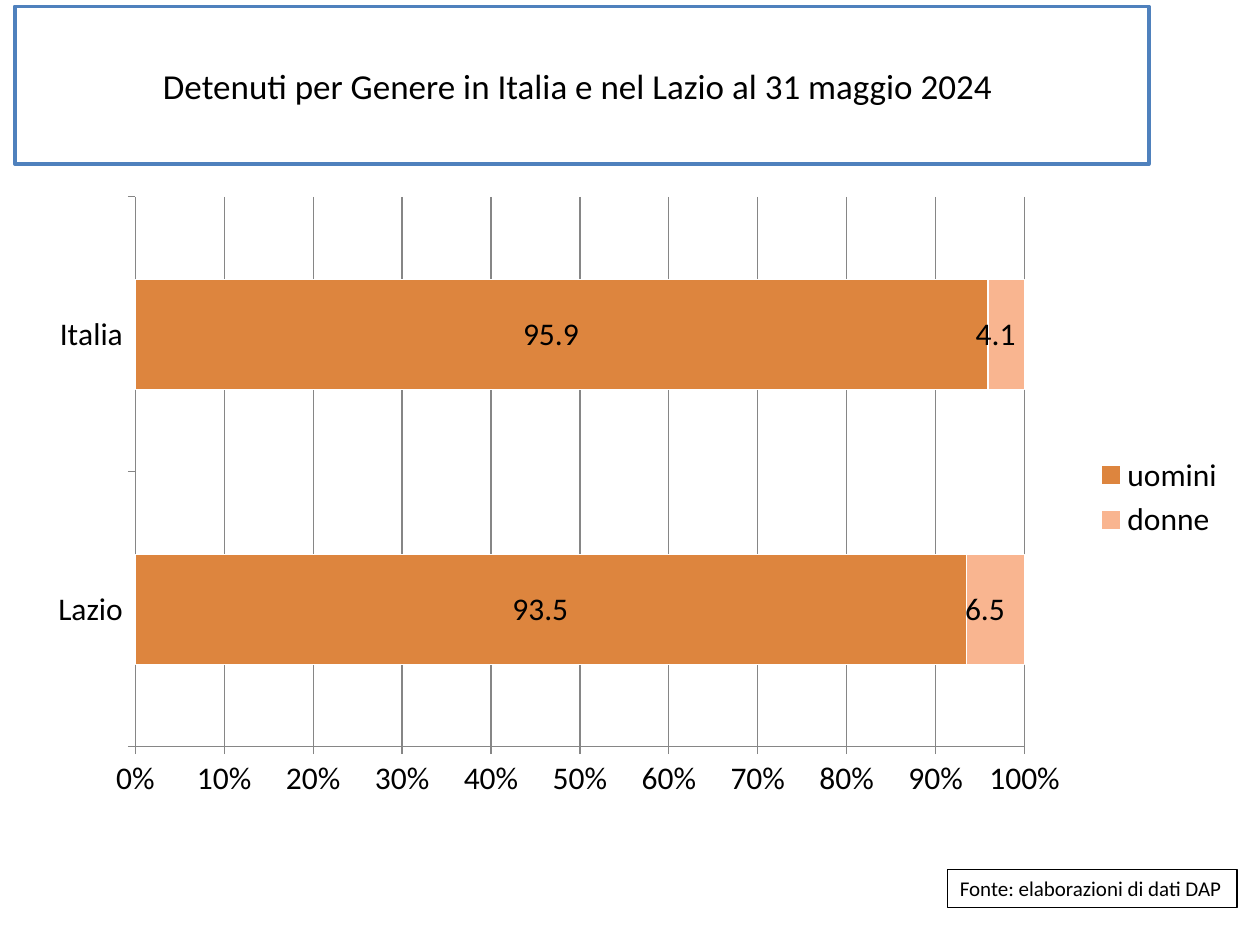
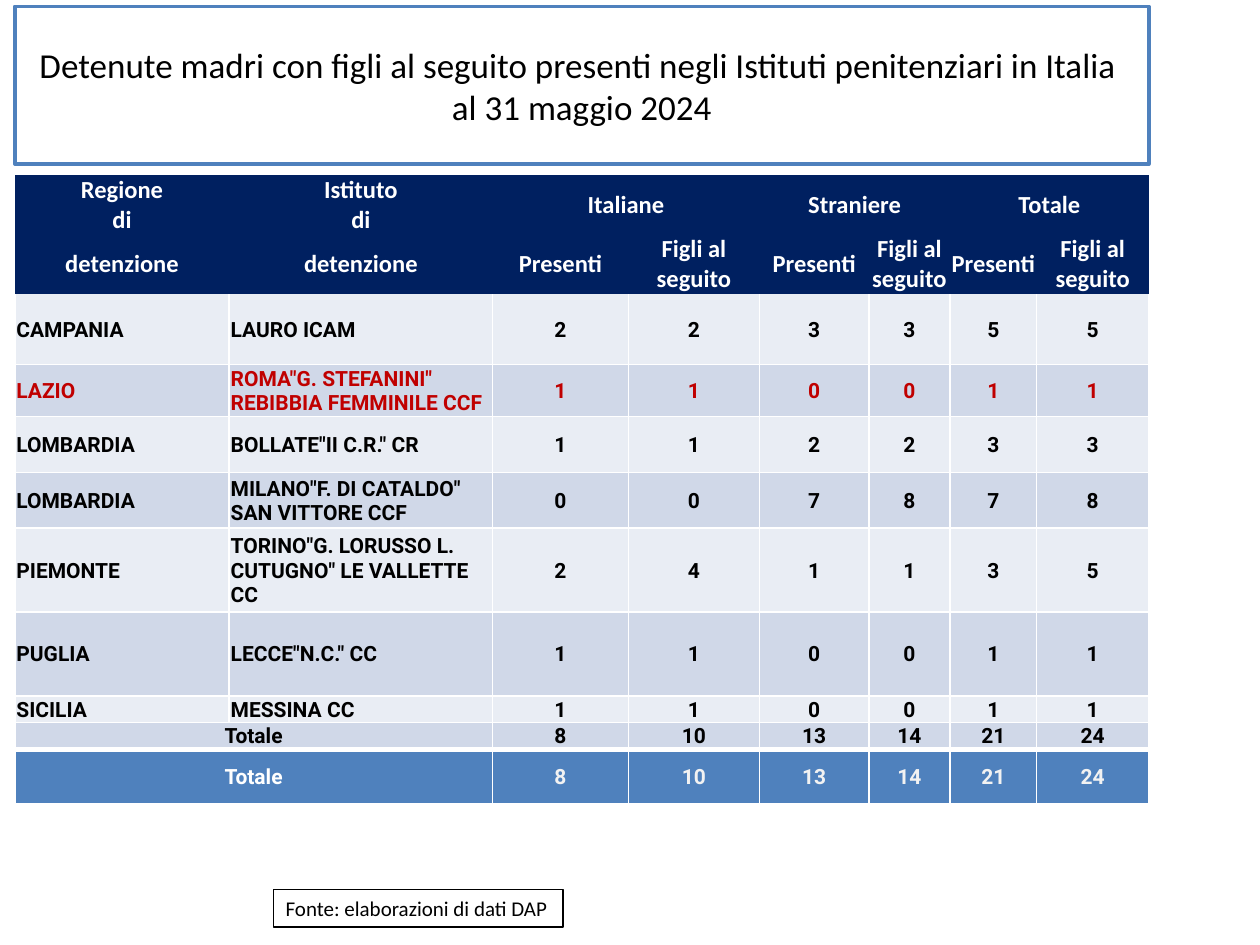
from dataclasses import dataclass

from lxml.etree import SubElement
from pptx import Presentation
from pptx.chart.data import CategoryChartData as ChartData
from pptx.dml.color import RGBColor as Rgb
from pptx.enum.chart import XL_CHART_TYPE as Kind
from pptx.enum.chart import XL_LABEL_POSITION as Spot
from pptx.enum.chart import XL_LEGEND_POSITION as Side
from pptx.enum.chart import XL_TICK_MARK as Tick
from pptx.enum.shapes import MSO_SHAPE as Form
from pptx.enum.text import MSO_ANCHOR as Anchor
from pptx.enum.text import MSO_AUTO_SIZE as Fit
from pptx.enum.text import PP_ALIGN as Align
from pptx.oxml import parse_xml
from pptx.oxml.ns import nsdecls, qn
from pptx.util import Cm, Pt

HUES = {
    "white": "FFFFFF", "black": "000000", "blue": "4F81BD", "navy": "002060",
    "light": "E9EDF4", "dark": "D0D8E8", "red": "C00000", "pale": "F2F2F2",
    "grey": "868686", "men": "DD853E", "women": "F9B590",
}
NUMBER = r"_-* #,##0.0\ _€_-;\-* #,##0.0\ _€_-"


def hue(name: str) -> Rgb:
    return Rgb.from_string(HUES[name])


@dataclass
class Box:
    """A framed text box; lengths in centimetres."""
    left: float
    top: float
    width: float
    height: float
    edge: str
    weight: float
    size: int
    title: bool = False


@dataclass
class Jail:
    """Mothers and children held, as (present, children) pairs."""
    region: str
    name: str
    locals: tuple[int, int]
    foreign: tuple[int, int]
    tone: str = "black"

    def counts(self) -> list[int]:
        both = [a + b for a, b in zip(self.locals, self.foreign)]
        return [*self.locals, *self.foreign, *both]


def write(frame, text: str, size: int = 12, font: str = "Calibri",
          tone: str = "black", bold: bool = False, align=Align.LEFT) -> None:
    par = frame.paragraphs[0]
    par.text = text
    par.alignment = align
    for run in par.runs:
        run.font.size, run.font.name, run.font.bold = Pt(size), font, bold
        run.font.color.rgb = hue(tone)


def draw(slide, box: Box, text: str) -> None:
    shape = slide.shapes.add_shape(
        Form.RECTANGLE, Cm(box.left), Cm(box.top), Cm(box.width), Cm(box.height))
    shape.shadow.inherit = False
    shape.fill.solid()
    shape.fill.fore_color.rgb = hue("white")
    shape.line.color.rgb = hue(box.edge)
    shape.line.width = Pt(box.weight)
    frame = shape.text_frame
    frame.word_wrap = box.title
    frame.vertical_anchor = Anchor.MIDDLE if box.title else Anchor.TOP
    frame.auto_size = Fit.NONE if box.title else Fit.SHAPE_TO_FIT_TEXT
    write(frame, text, size=box.size,
          align=Align.CENTER if box.title else Align.LEFT)


def start(deck, title: str, left: float, top: float):
    """Add a slide with its title and its source note."""
    slide = deck.slides.add_slide(deck.slide_layouts[6])
    draw(slide, Box(0.3, 0.13, 22.86, 3.18, "blue", 2, 20, title=True), title)
    draw(slide, Box(left, top, 5.84, 0.76, "black", 0.75, 12),
         "Fonte: elaborazioni di dati DAP")
    return slide


# Chart slide
def place(plot, **part: float) -> None:
    """Fix the inner plot area as fractions of the chart."""
    for old in plot.findall(qn("c:layout")):
        plot.remove(old)
    layout = parse_xml(f"<c:layout {nsdecls('c')}><c:manualLayout/></c:layout>")
    spots = {"layoutTarget": "inner", "xMode": "edge", "yMode": "edge", **part}
    for tag, val in spots.items():
        SubElement(layout[0], qn(f"c:{tag}")).set("val", str(val))
    plot.insert(0, layout)


def add_bars(slide) -> None:
    data = ChartData()
    data.categories = ["Lazio", "Italia"]
    data.add_series("uomini", [93.5, 95.9])
    data.add_series("donne", [6.5, 4.1])
    chart = slide.shapes.add_chart(
        Kind.BAR_STACKED_100, Cm(0.69), Cm(3.73), Cm(24.26), Cm(12.6), data).chart
    chart.has_title = False
    chart.font.size, chart.font.name = Pt(18), "Calibri"
    chart.font.color.rgb = hue("black")
    chart.has_legend = True
    chart.legend.position = Side.RIGHT
    chart.legend.include_in_layout = False

    bars = chart.plots[0]
    bars.gap_width, bars.overlap, bars.vary_by_categories = 150, 100, False
    for series, tone in zip(bars.series, ("men", "women")):
        series.format.fill.solid()
        series.format.fill.fore_color.rgb = hue(tone)
        series.format.line.color.rgb = hue("white")
        series.format.line.width = Pt(0.75)
        labels = series.data_labels
        labels.show_value, labels.position = True, Spot.CENTER
        labels.number_format, labels.number_format_is_linked = NUMBER, False

    scale = chart.value_axis
    scale.minimum_scale, scale.maximum_scale, scale.major_unit = 0, 1, 0.1
    scale.has_major_gridlines = True
    scale.tick_labels.number_format = "0%"
    scale.tick_labels.number_format_is_linked = False
    for axis in (scale, chart.category_axis):
        axis.major_tick_mark = Tick.OUTSIDE
        axis.format.line.color.rgb = hue("grey")
    scale.major_gridlines.format.line.color.rgb = hue("grey")
    place(chart.element.find(".//" + qn("c:plotArea")), x=0.084, y=0.019, w=0.739, h=0.88)


# Table slide
COLS = (4.32, 5.31, 2.74, 2.64, 2.21, 1.63, 1.75, 2.26)
ROWS = (0.6, 0.6, 1.2, 1.42, 1.03, 1.13, 1.12, 1.69, 1.69, 0.52, 0.52, 1.1)
JAILS = [
    Jail("CAMPANIA", "LAURO ICAM", (2, 2), (3, 3)),
    Jail("LAZIO", 'ROMA"G. STEFANINI" REBIBBIA FEMMINILE CCF', (1, 1), (0, 0), "red"),
    Jail("LOMBARDIA", 'BOLLATE"II C.R." CR', (1, 1), (2, 2)),
    Jail("LOMBARDIA", 'MILANO"F. DI CATALDO" SAN VITTORE CCF', (0, 0), (7, 8)),
    Jail("PIEMONTE", 'TORINO"G. LORUSSO L. CUTUGNO" LE VALLETTE CC', (2, 4), (1, 1)),
    Jail("PUGLIA", 'LECCE"N.C." CC', (1, 1), (0, 0)),
    Jail("SICILIA", "MESSINA CC", (1, 1), (0, 0)),
]
HEAD = [
    ["Regione", "Istituto", "Italiane", "", "Straniere", "", "Totale", ""],
    ["di", "di"] + [""] * 6,
    ["detenzione", "detenzione"] + ["Presenti", "Figli al seguito"] * 3,
]


def edge(cell, **sides: float) -> None:
    """Set white borders in points; zero leaves a side bare."""
    props = cell._tc.get_or_add_tcPr()
    for spot, (side, width) in enumerate(sides.items()):
        line = parse_xml(f'<a:ln{side} {nsdecls("a")} w="{Pt(width)}"/>')
        if width:
            fill = SubElement(line, qn("a:solidFill"))
            SubElement(fill, qn("a:srgbClr")).set("val", HUES["white"])
        else:
            SubElement(line, qn("a:noFill"))
        props.insert(spot, line)


def style(cell, fill: str, inset: float, rule: float, top: float) -> None:
    cell.fill.solid()
    cell.fill.fore_color.rgb = hue(fill)
    cell.vertical_anchor = Anchor.MIDDLE
    cell.margin_left = cell.margin_right = cell.margin_top = Cm(inset)
    cell.margin_bottom = 0
    edge(cell, L=rule, R=rule, T=top, B=rule)


def add_grid(slide) -> None:
    grid = slide.shapes.add_table(
        len(ROWS), len(COLS), Cm(0.3), Cm(3.53), Cm(sum(COLS)), Cm(sum(ROWS))).table
    for col, width in zip(grid.columns, COLS):
        col.width = Cm(width)
    for row, height in zip(grid.rows, ROWS):
        row.height = Cm(height)

    # Header
    for i, texts in enumerate(HEAD):
        for j, text in enumerate(texts):
            cell = grid.cell(i, j)
            style(cell, "navy", 0, 0, 0)
            write(cell.text_frame, text, size=14, tone="white", bold=True,
                  align=Align.CENTER)
    for j in (2, 4, 6):
        grid.cell(0, j).merge(grid.cell(1, j + 1))

    # Body and totals
    sums = [sum(col) for col in zip(*(jail.counts() for jail in JAILS))]
    total = ["Totale", "", *sums]
    body = [([jail.region, jail.name, *jail.counts()], jail.tone) for jail in JAILS]
    body += [(total, "black"), (total, "pale")]
    last = len(ROWS) - 1
    for i, (vals, tone) in enumerate(body, len(HEAD)):
        fill = "blue" if i == last else ("dark", "light")[i % 2]
        top = 3 if i == last else 0 if i == len(HEAD) else 1
        for j, val in enumerate(vals):
            cell = grid.cell(i, j)
            style(cell, fill, 0.03, 1, top)
            side = Align.LEFT if j < 2 and vals is not total else Align.CENTER
            ink = "white" if i == last and j == 0 else tone
            write(cell.text_frame, str(val), font="Roboto", tone=ink, bold=True,
                  align=side)
    for i in (last - 1, last):
        grid.cell(i, 0).merge(grid.cell(i, 1))


def main() -> None:
    deck = Presentation()
    deck.slide_width, deck.slide_height = Cm(25.4), Cm(19.05)
    add_bars(start(
        deck, "Detenuti per Genere in Italia e nel Lazio al 31 maggio 2024 ",
        19.1, 17.53))
    add_grid(start(
        deck, "Detenute madri con figli al seguito presenti negli Istituti "
        "penitenziari in Italia \val 31 maggio 2024", 5.51, 17.93))
    deck.save("out.pptx")


if __name__ == "__main__":
    main()
